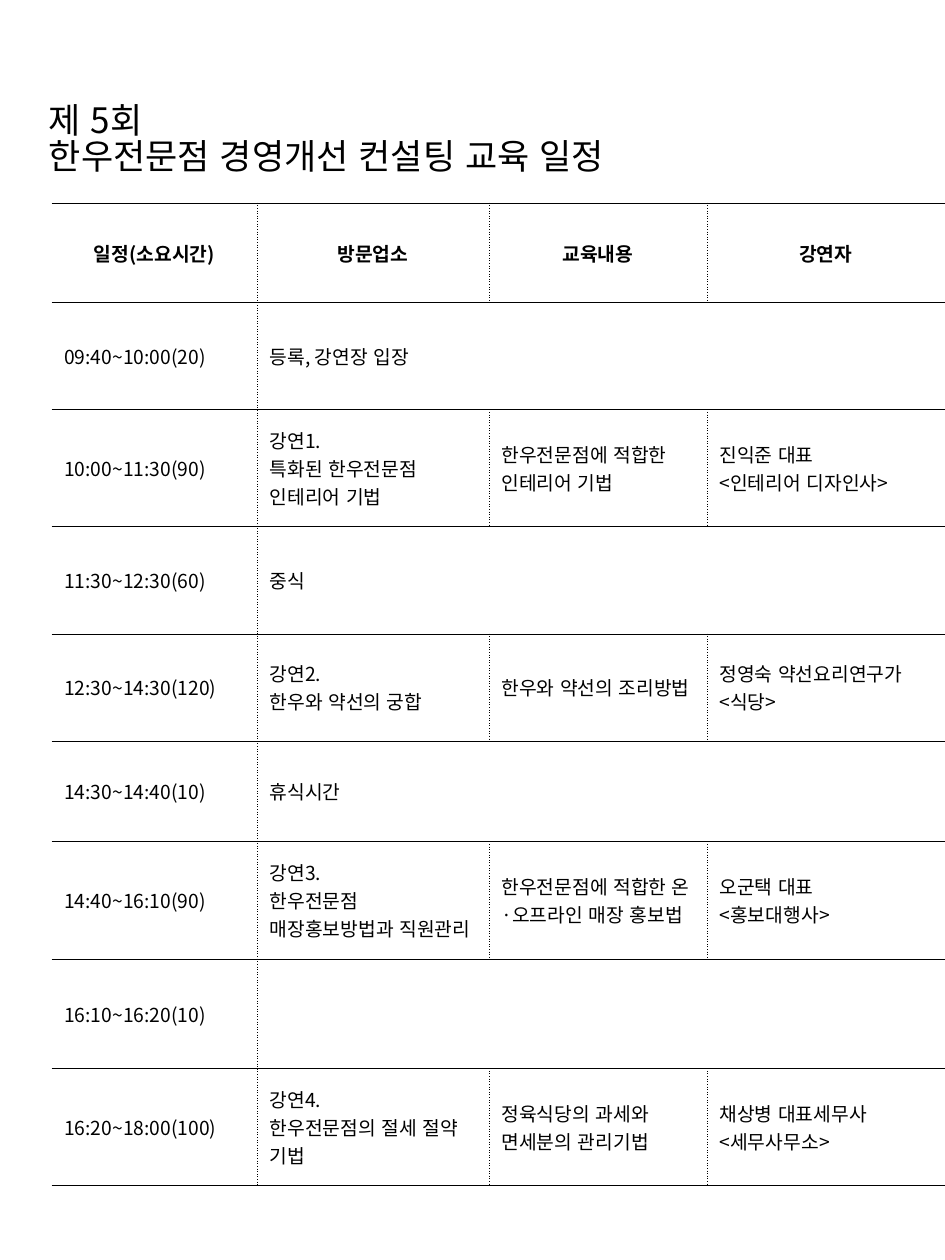
from lxml.etree import SubElement
from pptx import Presentation
from pptx.dml.color import RGBColor
from pptx.enum.lang import MSO_LANGUAGE_ID as Language
from pptx.enum.text import MSO_ANCHOR as Anchor, PP_ALIGN as Align
from pptx.oxml import parse_xml
from pptx.oxml.ns import nsdecls, qn
from pptx.util import Inches, Pt

FONT = "Noto Sans CJK KR"
BLACK = "000000"
WHITE = "FFFFFF"
TITLE = "제 5회\v한우전문점 경영개선 컨설팅 교육 일정"
COLUMN_WIDTHS = [1.63, 1.84, 1.73, 1.89]
ROW_HEIGHTS = [0.79, 0.85, 0.93, 0.85, 0.85, 0.8, 0.93, 0.87, 0.93]
SCHEDULE = [
    ["일정(소요시간)", "방문업소", "교육내용", "강연자"],
    ["09:40~10:00(20)", "등록, 강연장 입장"],
    ["10:00~11:30(90)", "강연1.\n특화된 한우전문점 인테리어 기법",
     "한우전문점에 적합한 인테리어 기법", "진익준 대표\n<인테리어 디자인사>"],
    ["11:30~12:30(60)", "중식"],
    ["12:30~14:30(120)", "강연2.\n한우와 약선의 궁합",
     "한우와 약선의 조리방법", "정영숙 약선요리연구가\n<식당>"],
    ["14:30~14:40(10)", "휴식시간"],
    ["14:40~16:10(90)", "강연3.\n한우전문점 매장홍보방법과 직원관리",
     "한우전문점에 적합한 온·오프라인 매장 홍보법", "오군택 대표\n<홍보대행사>"],
    ["16:10~16:20(10)", ""],
    ["16:20~18:00(100)", "강연4.\n한우전문점의 절세 절약 기법",
     "정육식당의 과세와 면세분의 관리기법", "채상병 대표세무사\n<세무사무소>"],
]


def color(hex_value):
    return RGBColor.from_string(hex_value)


def format_text(frame, size, bold=False, align=Align.LEFT, spacing=None):
    for para in frame.paragraphs:
        para.alignment = align
        para.line_spacing = spacing
        for span in para.runs:
            font = span.font
            font.name = FONT
            font.size = Pt(size)
            font.bold = bold
            font.color.rgb = color(BLACK)
            font.language_id = Language.KOREAN
            SubElement(font._element, qn("a:ea"), typeface=FONT)


def add_title(page):
    box = page.shapes.add_textbox(Inches(0.29), Inches(0.28), Inches(6.93), Inches(1.67))
    frame = box.text_frame
    frame.word_wrap = True
    frame.vertical_anchor = Anchor.MIDDLE
    frame.paragraphs[0].text = TITLE
    format_text(frame, 20, spacing=0.85)


def border(side, dash):
    if dash:
        line = (f'<a:solidFill><a:srgbClr val="{BLACK}"/></a:solidFill>'
                f'<a:prstDash val="{dash}"/>')
    else:
        line = "<a:noFill/>"
    return parse_xml(f'<a:ln{side} {nsdecls("a")} w="{Pt(0.25)}">{line}</a:ln{side}>')


def set_borders(cell, left, right):
    dashes = {"L": left and "sysDot", "R": right and "sysDot", "T": "solid", "B": "solid"}
    properties = cell._tc.get_or_add_tcPr()
    for index, (side, dash) in enumerate(dashes.items()):
        properties.insert(index, border(side, dash))


def fill_row(table, row, texts):
    last = len(COLUMN_WIDTHS) - 1
    is_header = row == 0
    is_break = len(texts) == 2
    if is_break:
        table.cell(row, 1).merge(table.cell(row, last))
    for column in range(last + 1):
        cell = table.cell(row, column)
        cell.fill.solid()
        cell.fill.fore_color.rgb = color(WHITE)
        cell.vertical_anchor = Anchor.MIDDLE
        if column < len(texts):
            cell.text_frame.text = texts[column]
            format_text(cell.text_frame, 11, is_header,
                        Align.CENTER if is_header else Align.LEFT)
        inner_left = column > 0 and not cell.is_spanned
        inner_right = column == 0 or (column < last and not is_break)
        set_borders(cell, inner_left, inner_right)


def add_schedule(page):
    frame = page.shapes.add_table(
        len(ROW_HEIGHTS), len(COLUMN_WIDTHS), Inches(0.41), Inches(1.61),
        Inches(sum(COLUMN_WIDTHS)), Inches(sum(ROW_HEIGHTS)))
    table = frame.table
    table.first_row = False
    table.horz_banding = False
    for column, width in zip(table.columns, COLUMN_WIDTHS):
        column.width = Inches(width)
    for row, height in zip(table.rows, ROW_HEIGHTS):
        row.height = Inches(height)
    for row, texts in enumerate(SCHEDULE):
        fill_row(table, row, texts)


def main():
    deck = Presentation()
    deck.slide_width = Inches(7.5)
    deck.slide_height = Inches(10)
    page = deck.slides.add_slide(deck.slide_layouts[6])
    add_title(page)
    add_schedule(page)
    deck.save("out.pptx")


if __name__ == "__main__":
    main()
